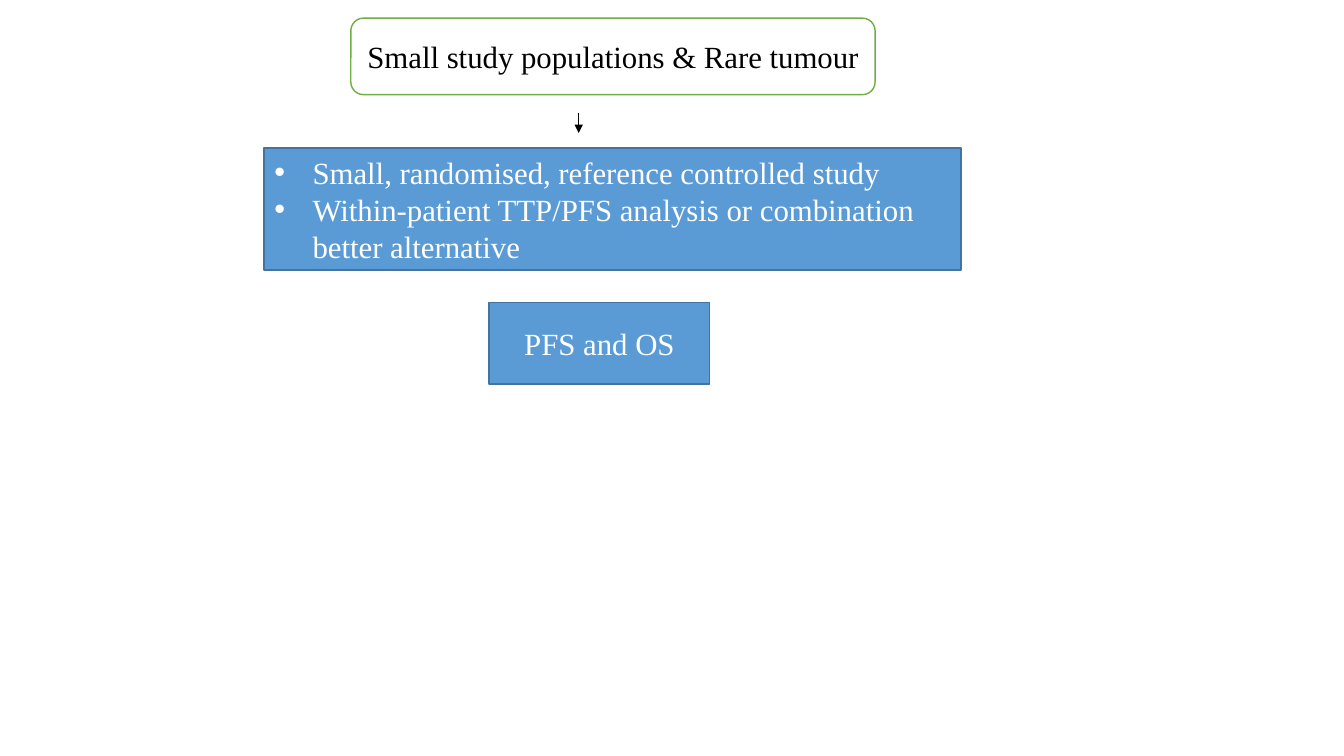
from lxml import etree
from pptx import Presentation
from pptx.dml.color import RGBColor
from pptx.enum.shapes import MSO_CONNECTOR, MSO_SHAPE
from pptx.enum.text import MSO_ANCHOR, MSO_AUTO_SIZE, PP_ALIGN
from pptx.oxml.ns import qn
from pptx.util import Inches, Pt

BLACK, WHITE = "000000", "FFFFFF"
BLUE, DARK_BLUE, GREEN = "5B9BD5", "43739E", "70AD47"
FONT = {"name": "Times New Roman", "size": Pt(22)}
FRAME = {
    "word_wrap": True,
    "auto_size": MSO_AUTO_SIZE.NONE,
    "vertical_anchor": MSO_ANCHOR.MIDDLE,
}
SPACING = {"space_before": Pt(0), "space_after": Pt(0), "line_spacing": 1.0}
LIST_INDENT = Inches(0.38)


def colour(hex_code):
    return RGBColor.from_string(hex_code)


def set_values(target, values):
    for name, value in values.items():
        setattr(target, name, value)


class StudyPage:
    """Holds the current slide and its common style."""

    def __init__(self, deck):
        self.page = deck.slides.add_slide(deck.slide_layouts[1])
        title = self.page.shapes.title
        title.element.getparent().remove(title.element)

    def paint(self, box, fill, line):
        box.fill.solid()
        box.fill.fore_color.rgb = colour(fill)
        box.line.color.rgb = colour(line)
        box.line.width = Pt(1)
        set_values(box.text_frame, FRAME)

    def add_text(self, para, text, ink, align):
        set_values(para, {**SPACING, "alignment": align})
        span = para.add_run()
        span.text = text
        set_values(span.font, FONT)
        span.font.color.rgb = colour(ink)

    def box(self, kind, area, text, fill, line, ink):
        box = self.page.shapes.add_shape(kind, *map(Inches, area))
        box.shadow.inherit = False
        self.paint(box, fill, line)
        self.add_text(box.text_frame.paragraphs[0], text, ink, PP_ALIGN.CENTER)

    def bullet_list(self, area, items, fill, line, ink):
        body = self.page.placeholders[1]
        set_values(body, dict(zip(("left", "top", "width", "height"), map(Inches, area))))
        self.paint(body, fill, line)
        frame = body.text_frame
        for index, (text, has_bullet) in enumerate(items):
            para = frame.add_paragraph() if index else frame.paragraphs[0]
            self.add_text(para, text, ink, PP_ALIGN.LEFT)
            self.bullet(para, has_bullet)

    def bullet(self, para, visible):
        properties = para._p.get_or_add_pPr()
        properties.set("marL", str(LIST_INDENT))
        properties.set("indent", str(-LIST_INDENT if visible else 0))
        if visible:
            etree.SubElement(properties, qn("a:buFont"), typeface="Arial")
            etree.SubElement(properties, qn("a:buChar"), char="•")
        else:
            etree.SubElement(properties, qn("a:buNone"))

    def arrow(self, start, end, ink):
        arrow = self.page.shapes.add_connector(
            MSO_CONNECTOR.STRAIGHT, *map(Inches, start + end))
        arrow.line.color.rgb = colour(ink)
        arrow.line.width = Pt(0.5)
        properties = arrow._element.spPr
        etree.SubElement(properties.find(qn("a:ln")), qn("a:tailEnd"), type="triangle")
        etree.SubElement(properties, qn("a:effectLst"))


def main():
    deck = Presentation()
    deck.slide_width, deck.slide_height = Inches(13.33), Inches(7.5)
    study = StudyPage(deck)

    # Study setting
    study.box(MSO_SHAPE.FLOWCHART_ALTERNATE_PROCESS, (3.48, 0.18, 5.2, 0.76),
              "Small study populations & Rare tumour", WHITE, GREEN, BLACK)
    study.arrow((5.74, 1.12), (5.74, 1.32), BLACK)

    # Design options
    study.bullet_list((2.62, 1.47, 6.91, 1.21), [
        ("Small, randomised, reference controlled study", True),
        ("Within-patient TTP/PFS analysis or combination", True),
        ("better alternative", False),
    ], BLUE, DARK_BLUE, WHITE)

    # Endpoints
    study.box(MSO_SHAPE.RECTANGLE, (4.85, 3, 2.19, 0.81),
              "PFS and OS", BLUE, DARK_BLUE, WHITE)

    deck.save("out.pptx")


if __name__ == "__main__":
    main()
